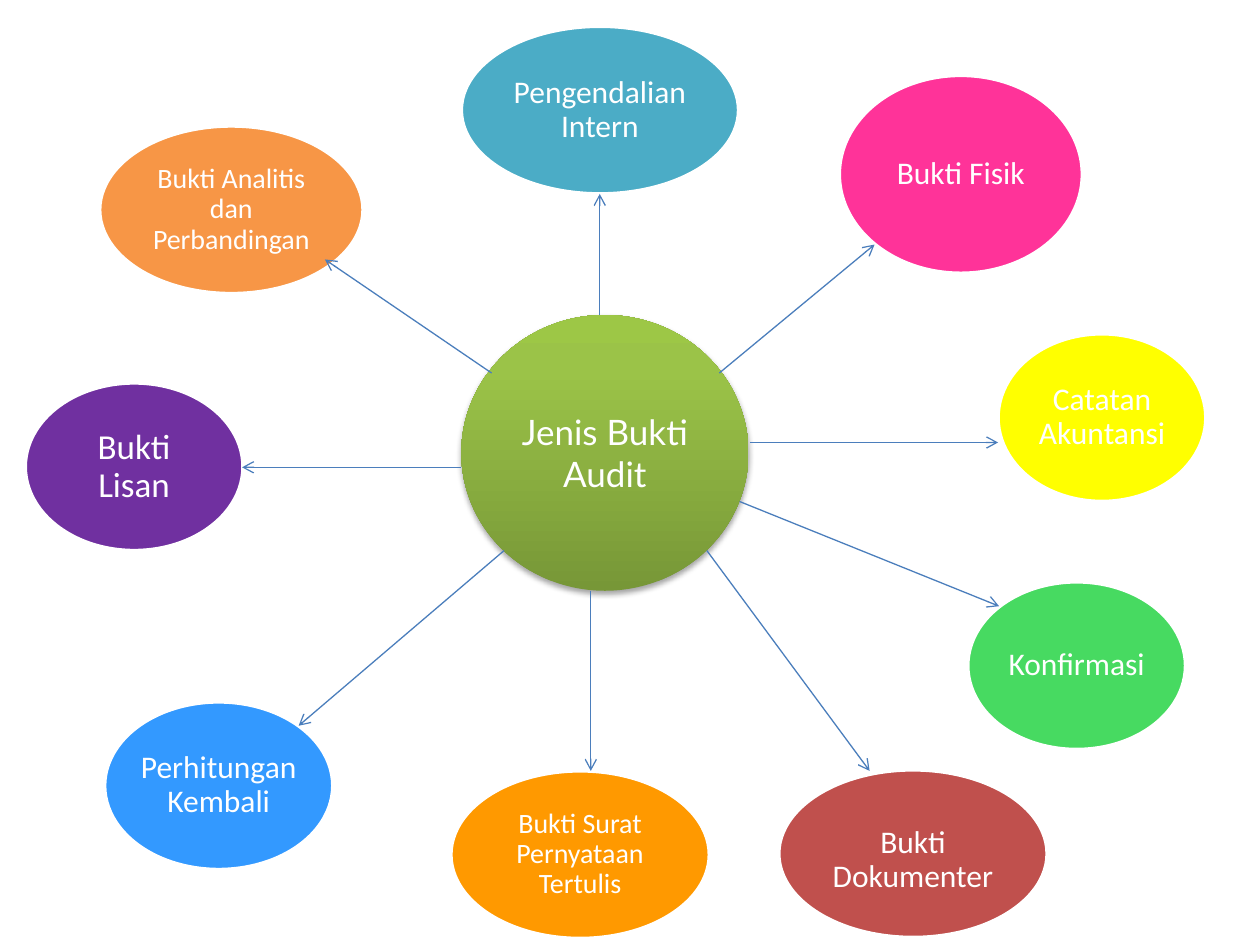
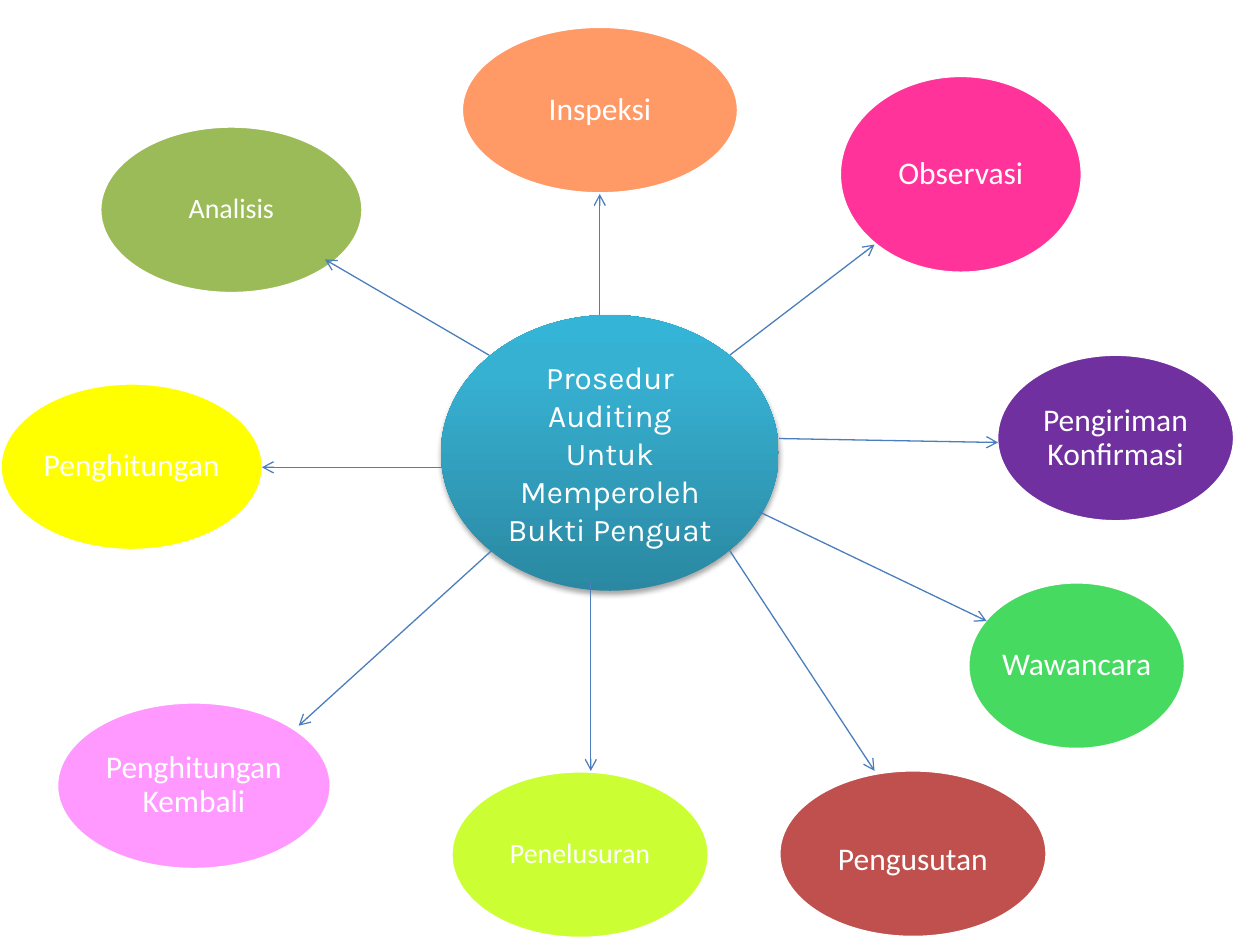
"""Builds two hub-and-satellite slides on audit evidence and audit procedures."""
from copy import deepcopy

from lxml.etree import SubElement
from pptx import Presentation
from pptx.dml.color import RGBColor
from pptx.enum.shapes import MSO_CONNECTOR, MSO_SHAPE
from pptx.enum.text import MSO_ANCHOR, PP_ALIGN
from pptx.oxml.ns import qn
from pptx.util import Cm, Pt

WHITE = RGBColor(0xFF, 0xFF, 0xFF)
ARROW_BLUE = RGBColor(0x4B, 0x7E, 0xBC)
ORANGE = RGBColor(0xF7, 0x96, 0x46)
AQUA = RGBColor(0x4B, 0xAC, 0xC6)
PINK = RGBColor(0xFF, 0x33, 0x99)
YELLOW = RGBColor(0xFF, 0xFF, 0x00)
GREEN = RGBColor(0x47, 0xDA, 0x61)
BRICK = RGBColor(0xC0, 0x50, 0x4D)
AMBER = RGBColor(0xFF, 0x99, 0x00)
SKY = RGBColor(0x33, 0x99, 0xFF)
PURPLE = RGBColor(0x70, 0x30, 0xA0)
OLIVE = RGBColor(0x9B, 0xBB, 0x59)
SALMON = RGBColor(0xFF, 0x99, 0x66)
LIME = RGBColor(0xCC, 0xFF, 0x33)
ORCHID = RGBColor(0xFF, 0x99, 0xFF)
OLIVE_SHADES = (RGBColor(0x77, 0x97, 0x37), RGBColor(0x9B, 0xC3, 0x48), RGBColor(0x9D, 0xC7, 0x46))
TEAL_SHADES = (RGBColor(0x2A, 0x88, 0xA2), RGBColor(0x37, 0xB1, 0xD2), RGBColor(0x34, 0xB4, 0xD6))

UPPER_LEFT = (2.01, 2.54, 5.31, 3.38)
TOP = (9.3, 0.53, 5.59, 3.38)
UPPER_RIGHT = (16.92, 1.52, 4.9, 3.99)
LOWER_RIGHT = (19.51, 11.73, 4.39, 3.38)
BOTTOM_RIGHT = (15.7, 15.52, 5.41, 3.38)
BOTTOM = (9.09, 15.54, 5.21, 3.38)

EVIDENCE = [
    ("Bukti Analitis dan Perbandingan", 16, ORANGE, UPPER_LEFT, (9.91, 7.52), (6.55, 5.23)),
    ("Pengendalian Intern", 18, AQUA, TOP, (12.09, 6.35), (12.09, 3.91)),
    ("Bukti Fisik", 18, PINK, UPPER_RIGHT, (14.5, 7.52), (17.63, 4.93)),
    ("Catatan Akuntansi", 18, YELLOW, (20.12, 6.73, 4.19, 3.38), (15.11, 8.92), (20.12, 8.92)),
    ("Konfirmasi", 18, GREEN, LOWER_RIGHT, (14.91, 10.11), (20.14, 12.22)),
    ("Bukti Dokumenter", 18, BRICK, BOTTOM_RIGHT, (14.25, 11.1), (17.53, 15.54)),
    ("Bukti Surat Pernyataan Tertulis", 16, AMBER, BOTTOM, (11.91, 11.91), (11.91, 15.54)),
    ("Perhitungan Kembali", 18, SKY, (2.11, 14.15, 4.6, 3.38), (10.16, 11.1), (6.02, 14.63)),
    ("Bukti Lisan", 20, PURPLE, (0.51, 7.72, 4.39, 3.38), (9.3, 9.42), (4.88, 9.42)),
]
PROCEDURES = [
    ("Analisis", 16, OLIVE, UPPER_LEFT, (9.86, 7.16), (6.55, 5.23)),
    ("Inspeksi", 18, SALMON, TOP, (12.09, 6.35), (12.09, 3.91)),
    ("Observasi", 18, PINK, UPPER_RIGHT, (14.71, 7.16), (17.63, 4.93)),
    ("Pengiriman Konfirmasi", 18, PURPLE, (20.09, 7.14, 4.8, 3.38), (15.7, 8.84), (20.12, 8.92)),
    ("Wawancara", 18, GREEN, LOWER_RIGHT, (15.29, 10.31), (19.89, 12.52)),
    ("Pengusutan", 18, BRICK, BOTTOM_RIGHT, (14.71, 11.1), (17.63, 15.54)),
    ("Penelusuran", 16, LIME, BOTTOM, (11.91, 11.73), (11.91, 15.54)),
    ("Penghitungan Kembali", 18, ORCHID, (1.14, 14.15, 5.54, 3.38), (9.91, 11.1), (6.02, 14.63)),
    ("Penghitungan", 18, YELLOW, (0, 7.72, 5.31, 3.38), (8.89, 9.42), (5.28, 9.42)),
]
DIAGRAMS = [
    ("Jenis Bukti Audit", 20, "Lato", OLIVE_SHADES, (9.3, 6.35, 5.79, 5.56), EVIDENCE),
    ("Prosedur Auditing Untuk Memperoleh Bukti Penguat", 18, "Karla", TEAL_SHADES,
     (8.89, 6.35, 6.81, 5.56), PROCEDURES),
]


def write(shape, text, size, font="Calibri", spacing=1.0, inset=None, drop=0, wrap=True):
    frame = shape.text_frame
    frame.word_wrap = wrap
    frame.vertical_anchor = MSO_ANCHOR.MIDDLE
    if inset is not None:
        frame.margin_left = frame.margin_right = frame.margin_bottom = Cm(inset)
        frame.margin_top = Cm(inset + drop)
    paragraph = frame.paragraphs[0]
    paragraph.alignment = PP_ALIGN.CENTER
    paragraph.line_spacing = spacing
    run = paragraph.add_run()
    run.text = text
    run.font.size = Pt(size)
    run.font.name = font
    run.font.color.rgb = WHITE


prs = Presentation()
prs.slide_width, prs.slide_height = Cm(25.4), Cm(19.05)

for topic, topic_size, topic_font, shades, hub_frame, satellites in DIAGRAMS:
    slide = prs.slides.add_slide(prs.slide_layouts[6])

    for label, size, colour, frame, start, tip in satellites:
        satellite = slide.shapes.add_shape(MSO_SHAPE.OVAL, *map(Cm, frame))
        satellite.shadow.inherit = False
        satellite.fill.solid()
        satellite.fill.fore_color.rgb = colour
        satellite.line.color.rgb = WHITE
        satellite.line.width = Pt(2)
        write(satellite, label, size, spacing=0.9, inset=0.05,
              drop=0.25 if frame == BOTTOM_RIGHT else 0, wrap=" " in label)

    hub = slide.shapes.add_shape(MSO_SHAPE.FLOWCHART_CONNECTOR, *map(Cm, hub_frame))
    hub.line.fill.background()
    hub.fill.gradient()
    hub.fill.gradient_angle = 90
    stop_list = hub._element.spPr.find(".//" + qn("a:gsLst"))
    stop_list.append(deepcopy(stop_list[-1]))
    for stop, position, shade in zip(hub.fill.gradient_stops, (0, 0.8, 1), shades):
        stop.position = position
        stop.color.rgb = shade
    hub.shadow.inherit = False
    effects = hub._element.spPr.find(qn("a:effectLst"))
    shadow = SubElement(effects, qn("a:outerShdw"), blurRad="40000", dist="23000",
                        dir="5400000", rotWithShape="0")
    shadow_colour = SubElement(shadow, qn("a:srgbClr"), val="000000")
    SubElement(shadow_colour, qn("a:alpha"), val="35000")
    write(hub, topic, topic_size, font=topic_font)

    for label, size, colour, frame, start, tip in satellites:
        arrow = slide.shapes.add_connector(MSO_CONNECTOR.STRAIGHT, *map(Cm, start + tip))
        arrow.line.color.rgb = ARROW_BLUE
        arrow.line.width = Pt(0.75)
        SubElement(arrow.line._get_or_add_ln(), qn("a:tailEnd"), type="arrow")
        SubElement(arrow._element.spPr, qn("a:effectLst"))

prs.save("out.pptx")
